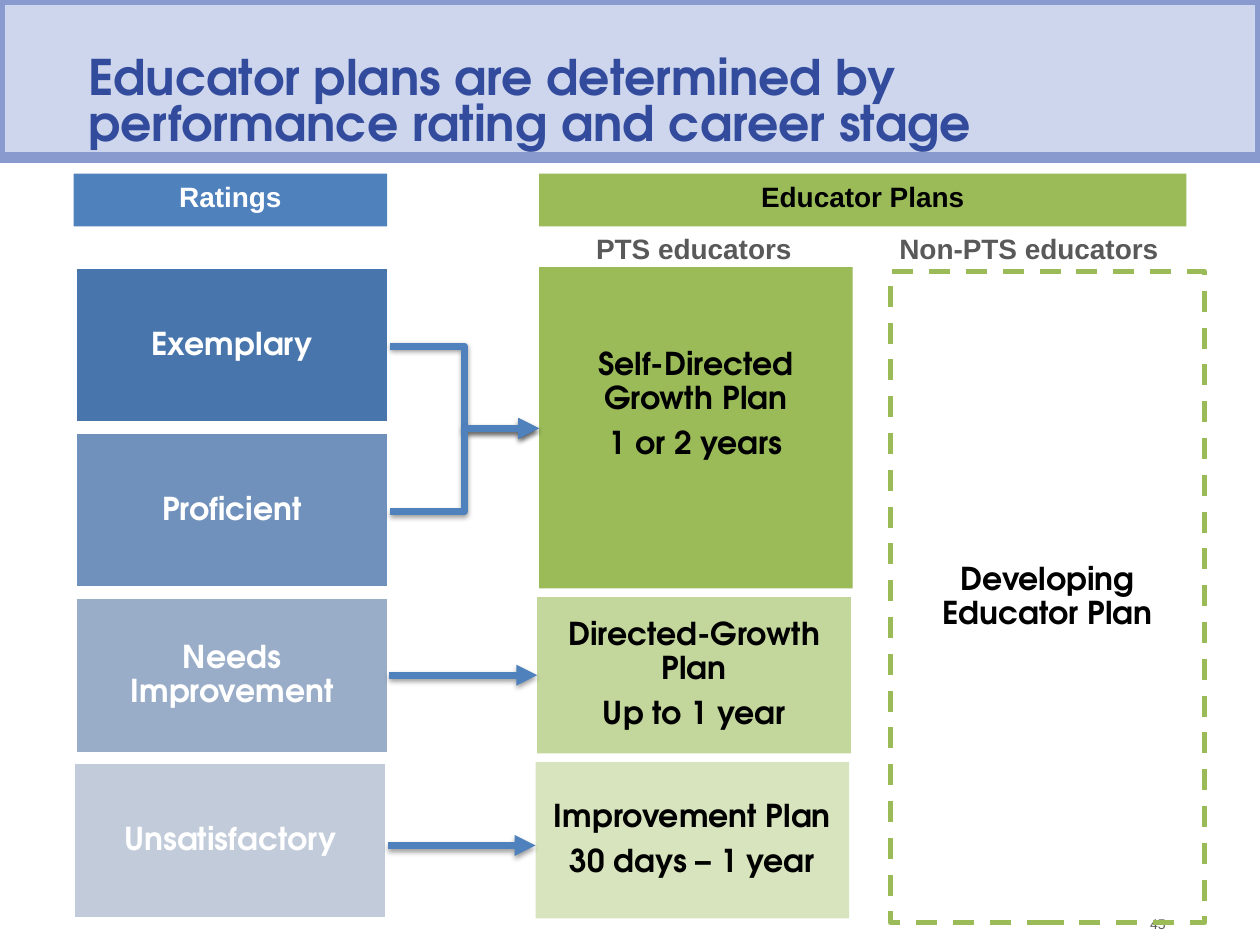
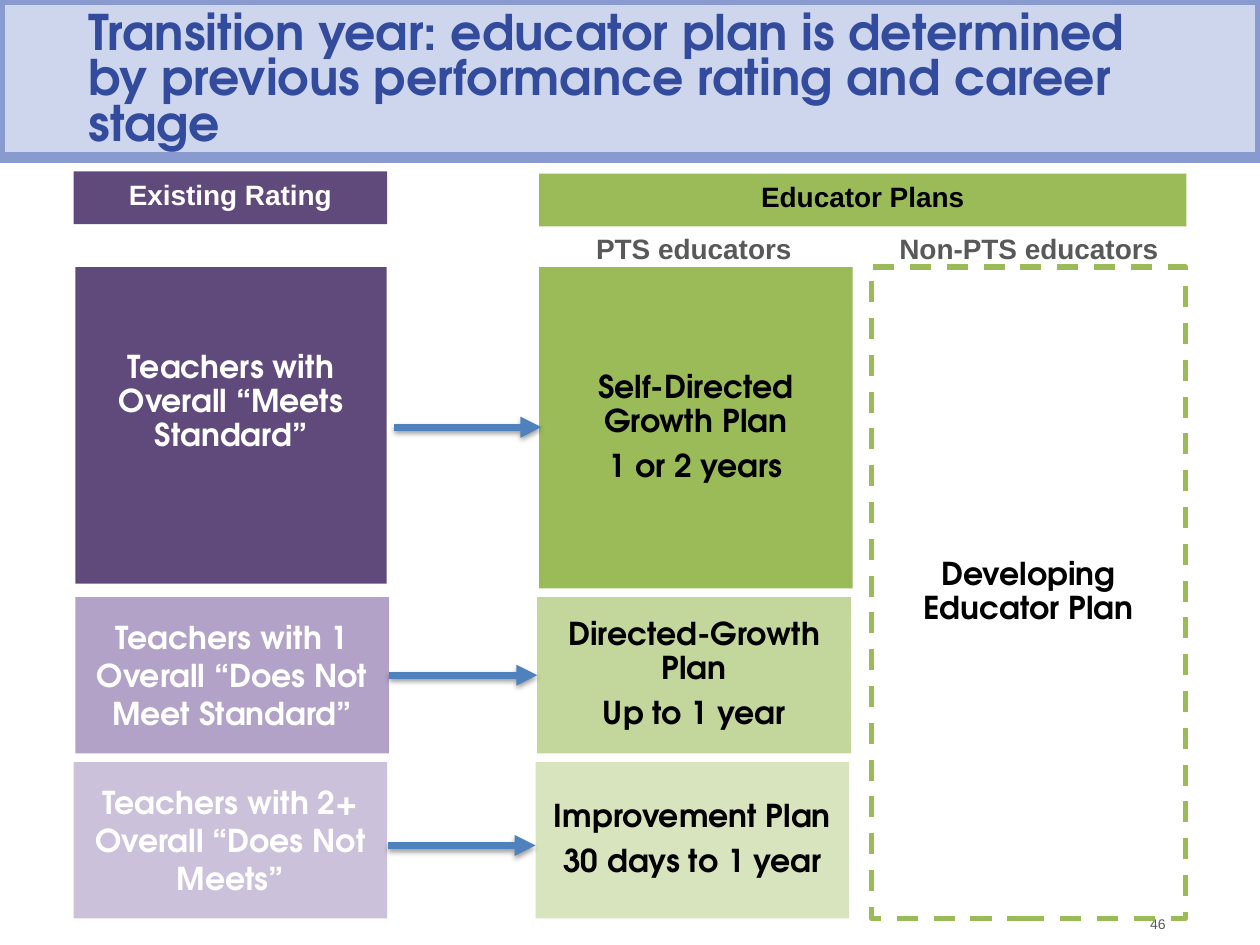
"""Build two slides that map educator ratings to educator plans."""
from lxml import etree
from pptx import Presentation
from pptx.dml.color import RGBColor
from pptx.enum.dml import MSO_LINE
from pptx.enum.shapes import MSO_CONNECTOR, MSO_SHAPE
from pptx.enum.text import MSO_ANCHOR, MSO_AUTO_SIZE, PP_ALIGN
from pptx.oxml.ns import qn
from pptx.util import Pt

RECTANGLE = MSO_SHAPE.RECTANGLE
STRAIGHT, ELBOW = MSO_CONNECTOR.STRAIGHT, MSO_CONNECTOR.ELBOW
TOP, MIDDLE, BOTTOM = MSO_ANCHOR.TOP, MSO_ANCHOR.MIDDLE, MSO_ANCHOR.BOTTOM
LEFT, CENTER, RIGHT = PP_ALIGN.LEFT, PP_ALIGN.CENTER, PP_ALIGN.RIGHT
DASH, NO_FIT = MSO_LINE.DASH, MSO_AUTO_SIZE.NONE
LEFT_SIDE, RIGHT_SIDE = 1, 3
TITLE_ONLY = 5

WHITE, BLACK, GRAY = "FFFFFF", "000000", "595959"
BLUE, GREEN, PURPLE = "4F81BD", "9BBB59", "604A7B"
TITLE_FILL, TITLE_EDGE, TITLE_INK = "CED6ED", "899ACE", "334B9C"
PLAN_FILLS = (GREEN, "C3D69B", "D7E4BD")

GRID_TOP, ROW_STEP, ROW_HEIGHT = 152.6, 94.3, 89.3
BOX_WIDTH, PLAN_LEFT = 179.3, 308
BAND_TOP, BAND_HEIGHT = 99.2, 30.2
ARROW_START, ARROW_END, LAST_ARROW_Y = 222, 306, 483.1
RAISED = 29

HEADING = {"font": {"name": "TeX Gyre Adventor", "size": Pt(28), "bold": True},
           "para": {"alignment": LEFT, "line_spacing": Pt(26)},
           "frame": {"vertical_anchor": BOTTOM}, "insets": (14.4, 0, 36, 3.6)}
LABEL = {"font": {"name": "Arial", "size": Pt(16), "bold": True},
         "para": {"alignment": CENTER},
         "frame": {"vertical_anchor": TOP}, "insets": (7.2, 3.6, 7.2, 3.6)}
LOOSE = {"font": {"name": "TeX Gyre Adventor", "size": Pt(18), "bold": True},
         "para": {"alignment": CENTER},
         "frame": {"vertical_anchor": MIDDLE}, "insets": (5, 3, 5, 3)}
CELL = {**LOOSE, "para": {"alignment": CENTER, "line_spacing": 0.9, "space_after": Pt(6.3)}}
RAISED_CELL = {**CELL, "insets": (5, 3, 5, RAISED)}
NUMBER = {"font": {"name": "Arial", "size": Pt(8), "bold": False},
          "para": {"alignment": RIGHT},
          "frame": {"vertical_anchor": MIDDLE}, "insets": (7.2, 3.6, 7.2, 3.6)}


def color(value):
    return RGBColor.from_string(value)


def apply(target, values):
    for name, value in values.items():
        setattr(target, name, value)


def row_top(row):
    return GRID_TOP + row * ROW_STEP


def row_middle(row):
    return row_top(row) + ROW_HEIGHT / 2


class Board:
    def __init__(self):
        self.deck = Presentation()
        self.deck.slide_width, self.deck.slide_height = Pt(720), Pt(540)
        self.page = None

    def start(self, title, number):
        self.page = self.deck.slides.add_slide(self.deck.slide_layouts[TITLE_ONLY])
        box = self.page.shapes.title
        apply(box, {"left": Pt(0), "top": Pt(0), "width": Pt(720), "height": Pt(90)})
        self.paint(box, TITLE_FILL, TITLE_EDGE, 6)
        self.fill_text(box, [title], HEADING, TITLE_INK)
        properties = box.text_frame.paragraphs[0]._p.get_or_add_pPr()
        properties.set("marL", str(Pt(36)))
        properties.set("indent", "0")
        self.text(632.2, 519.1, 41, 17.3, str(number), NUMBER, GRAY)

    def paint(self, box, fill, edge=None, weight=0):
        if fill:
            box.fill.solid()
            box.fill.fore_color.rgb = color(fill)
        else:
            box.fill.background()
        if edge:
            box.line.color.rgb = color(edge)
            box.line.width = Pt(weight)
        else:
            box.line.fill.background()

    def fill_text(self, box, lines, style, ink):
        frame = box.text_frame
        sides = ("margin_left", "margin_top", "margin_right", "margin_bottom")
        apply(frame, {"word_wrap": True, "auto_size": NO_FIT, **style["frame"]})
        apply(frame, dict(zip(sides, map(Pt, style["insets"]))))
        for index, line in enumerate(lines):
            para = frame.add_paragraph() if index else frame.paragraphs[0]
            apply(para, style["para"])
            span = para.add_run()
            span.text = line
            apply(span.font, style["font"])
            span.font.color.rgb = color(ink)

    def text(self, left, top, width, height, line, style, ink):
        box = self.page.shapes.add_textbox(Pt(left), Pt(top), Pt(width), Pt(height))
        self.fill_text(box, [line], style, ink)

    def box(self, left, top, width, height, lines, style, ink, fill, edge=None, weight=0):
        box = self.page.shapes.add_shape(RECTANGLE, Pt(left), Pt(top), Pt(width), Pt(height))
        box.shadow.inherit = False
        self.paint(box, fill, edge, weight)
        self.fill_text(box, lines, style, ink)
        return box

    def arrow(self, start, end, kind=STRAIGHT, source=None, target=None):
        line = self.page.shapes.add_connector(kind, *map(Pt, start + end))
        line.line.color.rgb = color(BLUE)
        line.line.width = Pt(4)
        if source and target:
            line.begin_connect(source, RIGHT_SIDE)
            line.end_connect(target, LEFT_SIDE)
        properties = line._element.spPr
        etree.SubElement(properties.find(qn("a:ln")), qn("a:tailEnd"), type="triangle")
        effects = etree.SubElement(properties, qn("a:effectLst"))
        shadow = etree.SubElement(effects, qn("a:outerShdw"), blurRad=str(Pt(3.1)),
                                  dist=str(Pt(1.6)), dir="5400000", rotWithShape="0")
        shade = etree.SubElement(shadow, qn("a:srgbClr"), val=BLACK)
        etree.SubElement(shade, qn("a:alpha"), val="38000")

    def ratings_band(self, label, top, fill):
        self.box(42, top, BOX_WIDTH, BAND_HEIGHT, [label], LABEL, WHITE, fill)

    def plans(self, last_duration, first_style, developing_left, developing_top):
        self.box(PLAN_LEFT, BAND_TOP, 370, BAND_HEIGHT, ["Educator Plans"], LABEL, BLACK, GREEN)
        self.text(PLAN_LEFT, 129, 177, 36, "PTS educators", LABEL, GRAY)
        self.text(498, 129, 180, 36, "Non-PTS educators", LABEL, GRAY)
        plans = (
            (0, ROW_STEP + ROW_HEIGHT, ["Self-Directed Growth Plan", "1 or 2 years"], first_style),
            (2, ROW_HEIGHT, ["Directed-Growth Plan", "Up to 1 year"], CELL),
            (3, ROW_HEIGHT, ["Improvement Plan", last_duration], CELL),
        )
        boxes = [
            self.box(PLAN_LEFT - index, row_top(row), BOX_WIDTH, height, lines, style, BLACK, fill)
            for index, ((row, height, lines, style), fill) in enumerate(zip(plans, PLAN_FILLS))
        ]
        developing = self.box(developing_left, developing_top, BOX_WIDTH, 372.2,
                              ["Developing Educator Plan"], CELL, BLACK, None, GREEN, 3)
        developing.line.dash_style = DASH
        return boxes

    def lower_arrows(self, rating, plan):
        middle = row_middle(2)
        self.arrow((ARROW_START, middle), (ARROW_END, middle), STRAIGHT, rating, plan)
        self.arrow((ARROW_START, LAST_ARROW_Y), (ARROW_END, LAST_ARROW_Y))


def build_rating_slide(board):
    board.start("Educator plans are determined by performance rating and career stage", 45)
    board.ratings_band("Ratings", BAND_TOP, BLUE)
    ratings = (("Exemplary", "4875AC", 43), ("Proficient", "7091BB", 43),
               ("Needs Improvement", "9AADC8", 43), ("Unsatisfactory", "C1CBD9", 42))
    boxes = [
        board.box(left, row_top(row), BOX_WIDTH, ROW_HEIGHT, [name], CELL, WHITE, fill, WHITE, 2)
        for row, (name, fill, left) in enumerate(ratings)
    ]
    plans = board.plans("30 days – 1 year", RAISED_CELL, 509, 155.2)
    for row in (0, 1):
        board.arrow((223, row_middle(row) + 0.5), (PLAN_LEFT, 244.8), ELBOW)
    board.lower_arrows(boxes[2], plans[1])


def build_transition_slide(board):
    board.start("Transition year: educator plan is determined by previous "
                "performance rating and career stage", 46)
    board.ratings_band("Existing Rating", 97.9, PURPLE)
    ratings = (
        (0, 43, 178, 181, "Teachers with Overall “Meets Standard”", RAISED_CELL, PURPLE),
        (2, 43, BOX_WIDTH, ROW_HEIGHT, "Teachers with 1 Overall “Does Not Meet Standard”",
         LOOSE, "B3A2C7"),
        (3, 42, BOX_WIDTH, ROW_HEIGHT, "Teachers with 2+ Overall “Does Not Meets”",
         LOOSE, "CCC1DA"),
    )
    boxes = [
        board.box(left, row_top(row), width, height, [name], style, WHITE, fill)
        for row, left, width, height, name, style, fill in ratings
    ]
    plans = board.plans("30 days to 1 year", CELL, 498, GRID_TOP)
    board.lower_arrows(boxes[1], plans[1])
    board.arrow((225.2, 244.1), (309.4, 244.1))


def main():
    board = Board()
    build_rating_slide(board)
    build_transition_slide(board)
    board.deck.save("out.pptx")


if __name__ == "__main__":
    main()
